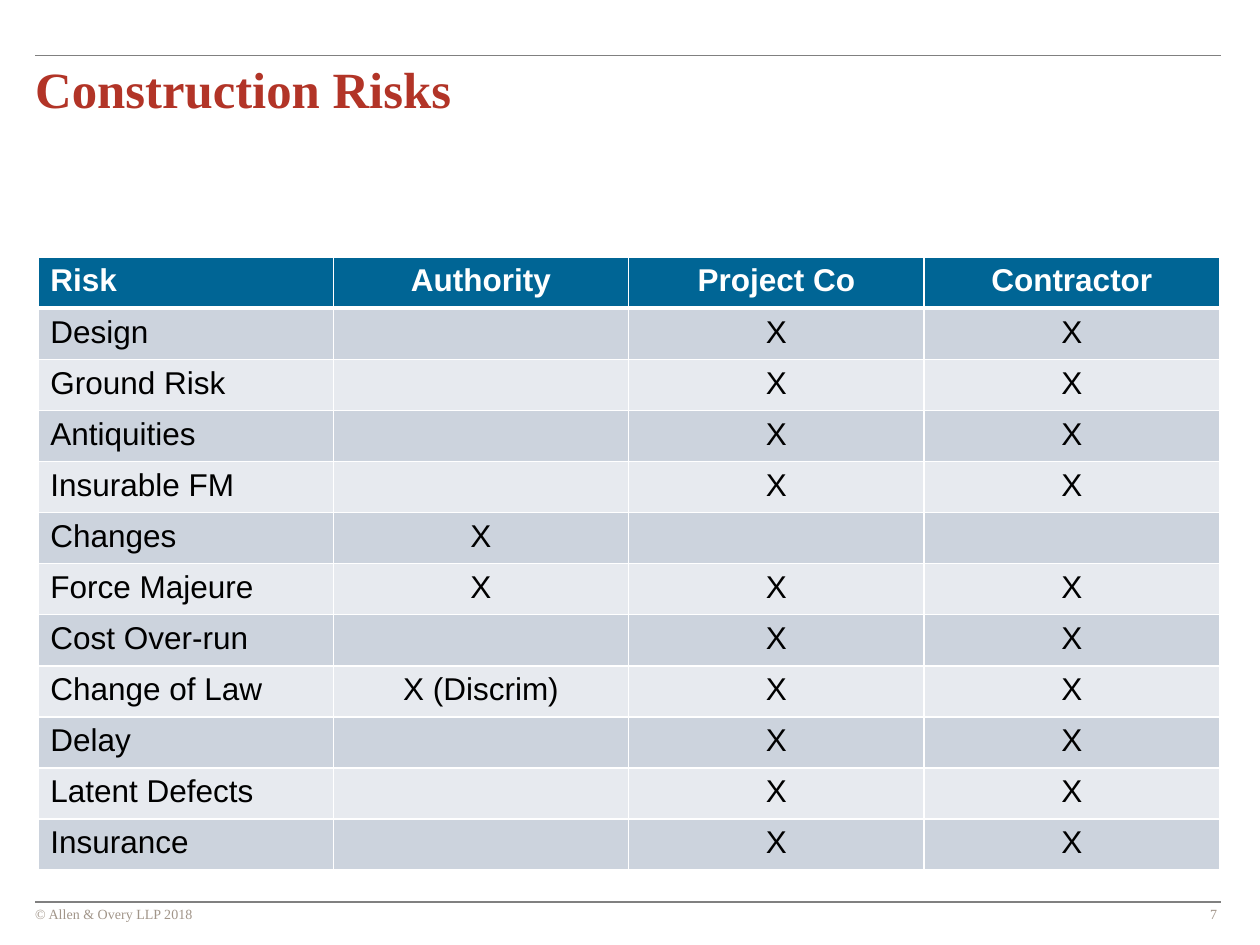
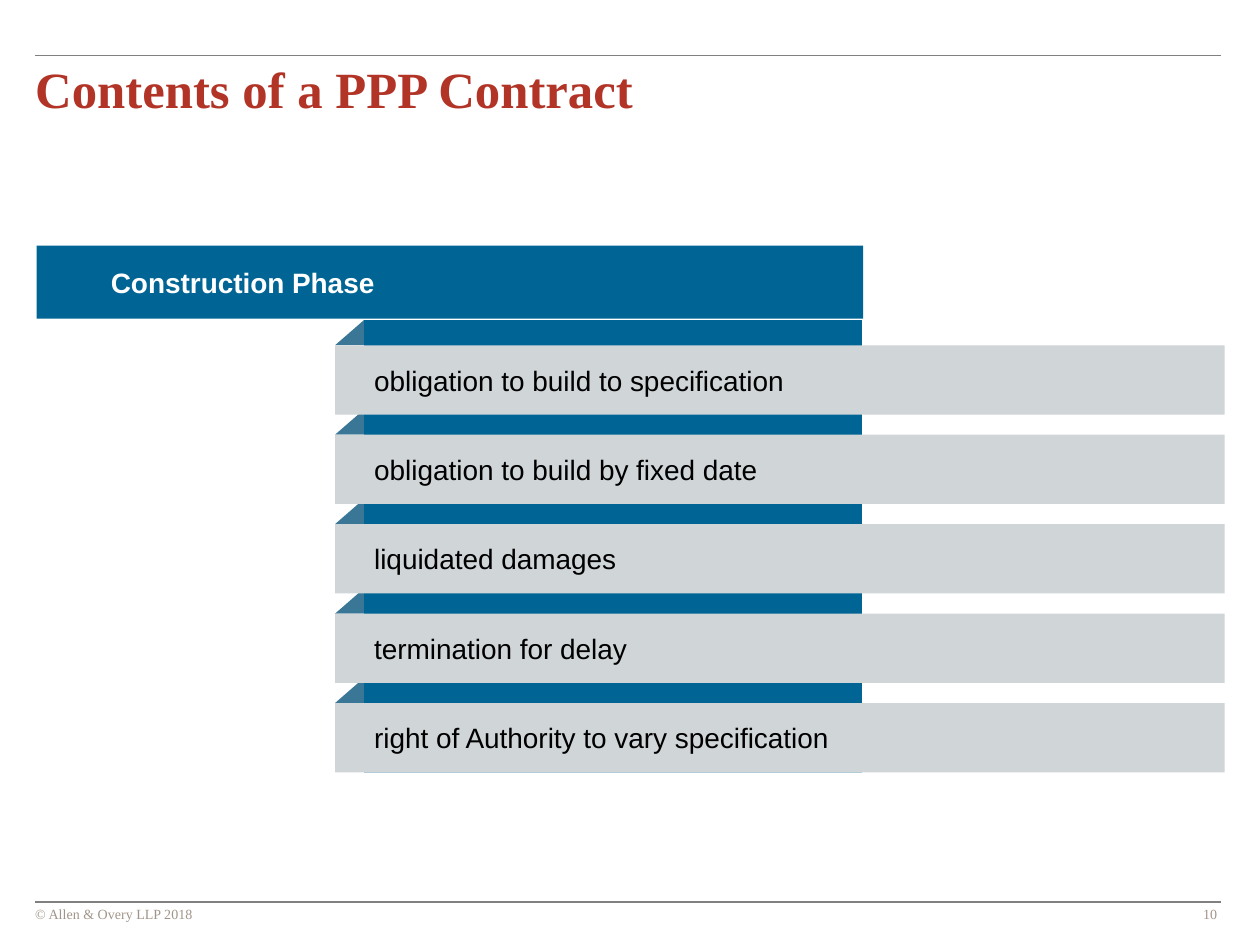
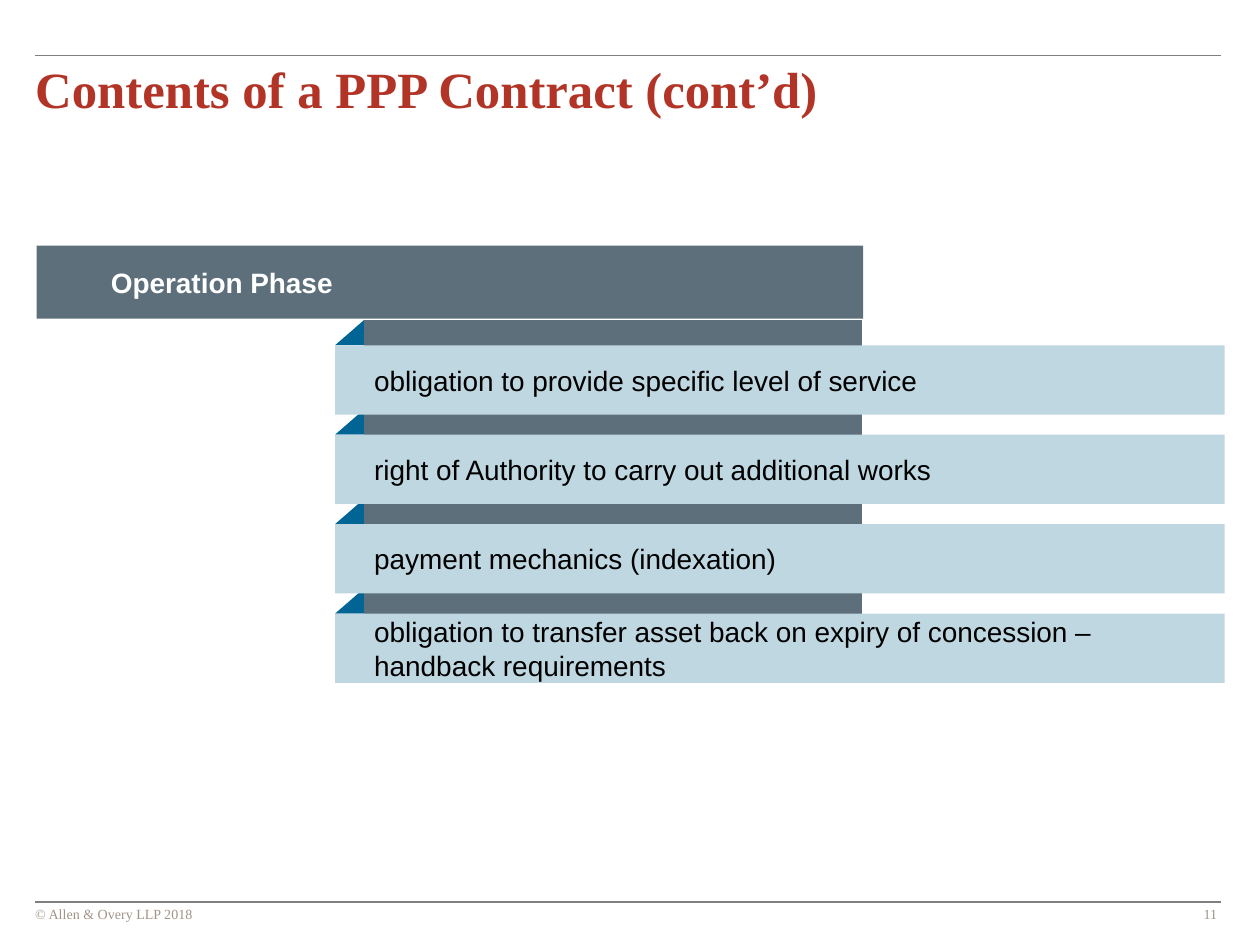
from dataclasses import dataclass

from lxml import etree
from pptx import Presentation
from pptx.dml.color import RGBColor
from pptx.enum.shapes import MSO_CONNECTOR, MSO_SHAPE
from pptx.enum.text import MSO_ANCHOR, MSO_AUTO_SIZE, PP_ALIGN
from pptx.oxml.ns import qn
from pptx.util import Inches, Pt

LEFT, CENTER, RIGHT = PP_ALIGN.LEFT, PP_ALIGN.CENTER, PP_ALIGN.RIGHT
MIDDLE = MSO_ANCHOR.MIDDLE
GROW = MSO_AUTO_SIZE.SHAPE_TO_FIT_TEXT
STRAIGHT = MSO_CONNECTOR.STRAIGHT
RECT, TRIANGLE = MSO_SHAPE.RECTANGLE, MSO_SHAPE.ISOSCELES_TRIANGLE


@dataclass(frozen=True)
class Theme:
    serif: str = "Times New Roman"
    sans: str = "Arial"
    title_size: int = 29
    table_size: int = 18
    bar_size: int = 16
    footer_size: int = 8
    red: str = "B23427"
    blue: str = "006595"
    steel: str = "3A7796"
    slate: str = "5C6F7B"
    silver: str = "D0D5D8"
    ice: str = "BFD7E1"
    row_dark: str = "CCD3DD"
    row_light: str = "E7EAEF"
    rule: str = "808080"
    footer: str = "A19589"
    white: str = "FFFFFF"
    black: str = "000000"


FOOTER = "© Allen & Overy LLP 2018"

RISK_TABLE = [
    ("Risk", "Authority", "Project Co", "Contractor"),
    ("Design", "", "X", "X"),
    ("Ground Risk", "", "X", "X"),
    ("Antiquities", "", "X", "X"),
    ("Insurable FM", "", "X", "X"),
    ("Changes", "X", "", ""),
    ("Force Majeure", "X", "X", "X"),
    ("Cost Over-run", "", "X", "X"),
    ("Change of Law", "X (Discrim)", "X", "X"),
    ("Delay", "", "X", "X"),
    ("Latent Defects", "", "X", "X"),
    ("Insurance", "", "X", "X"),
]

CONSTRUCTION = [
    "obligation to build to specification",
    "obligation to build by fixed date",
    "liquidated damages",
    "termination for delay",
    "right of Authority to vary specification",
]

OPERATION = [
    "obligation to provide specific level of service",
    "right of Authority to carry out additional works",
    "payment mechanics (indexation)",
    "obligation to transfer asset back on expiry of concession – handback requirements",
]


class Deck:
    def __init__(self, theme):
        self.theme = theme
        self.prs = Presentation()
        self.prs.slide_width, self.prs.slide_height = Inches(10), Inches(7.5)
        self.s = None

    def slide(self, title, number):
        """Start a slide with its rules, footer, page number and title."""
        t = self.theme
        self.s = self.prs.slides.add_slide(self.prs.slide_layouts[6])
        for y in (0.44, 7.16):
            self.rule(0.28, 9.69, y)
        small = dict(name=t.serif, size=t.footer_size, color=t.footer)
        self.text(FOOTER, (0.28, 7.19, 7.17, 0.13), small)
        self.text(str(number), (9.19, 7.19, 0.47, 0.13), small, RIGHT)
        self.text(title, (0.28, 0.46, 9.37, 0.49),
                  dict(name=t.serif, size=t.title_size, color=t.red, bold=True))

    def rule(self, x1, x2, y):
        ln = self.s.shapes.add_connector(
            STRAIGHT, Inches(x1), Inches(y), Inches(x2), Inches(y))
        ln.line.width = Pt(1)
        ln.line.color.rgb = RGBColor.from_string(self.theme.rule)
        etree.SubElement(ln._element.spPr, qn("a:effectLst"))

    def add_text(self, tf, text, style, align=LEFT):
        p = tf.paragraphs[0]
        p.alignment = align
        r = p.add_run()
        r.text = text
        values = dict(style)
        r.font.color.rgb = RGBColor.from_string(values.pop("color"))
        values["size"] = Pt(values["size"])
        for key, value in values.items():
            setattr(r.font, key, value)

    def frame(self, tf, margins, **settings):
        sides = ("margin_left", "margin_top", "margin_right", "margin_bottom")
        settings.update(zip(sides, map(Inches, margins)), word_wrap=True)
        for key, value in settings.items():
            setattr(tf, key, value)

    def text(self, text, box, style, align=LEFT):
        tf = self.s.shapes.add_textbox(*map(Inches, box)).text_frame
        self.frame(tf, (0, 0, 0, 0), auto_size=GROW)
        self.add_text(tf, text, style, align)

    def shape(self, kind, box, fill):
        sp = self.s.shapes.add_shape(kind, *map(Inches, box))
        sp.shadow.inherit = False
        sp.fill.solid()
        sp.fill.fore_color.rgb = RGBColor.from_string(fill)
        sp.line.fill.background()
        return sp

    def bar(self, text, box, fill, margins, color, bold=False):
        tf = self.shape(RECT, box, fill).text_frame
        self.frame(tf, margins, vertical_anchor=MIDDLE)
        self.add_text(tf, text, dict(name=self.theme.sans, size=self.theme.bar_size,
                                     color=color, bold=bold))

    def border(self, cell, side, points):
        ln = etree.SubElement(cell._tc.get_or_add_tcPr(), qn("a:ln" + side),
                              w=str(Pt(points)))
        fill = etree.SubElement(ln, qn("a:solidFill"))
        etree.SubElement(fill, qn("a:srgbClr"), val=self.theme.white)

    def table(self, rows, box):
        """Table with a blue header, banded rows and a heavy line under the header."""
        t = self.theme
        tbl = self.s.shapes.add_table(len(rows), len(rows[0]), *map(Inches, box)).table
        for i, row in enumerate(rows):
            head = i == 0
            fill = t.blue if head else (t.row_light, t.row_dark)[i % 2]
            widths = dict(L=1, R=1, T=3 if i == 1 else 1, B=3 if head else 1)
            style = dict(name=t.sans, size=t.table_size, bold=head,
                         color=t.white if head else t.black)
            for j, value in enumerate(row):
                cell = tbl.cell(i, j)
                for side, points in widths.items():
                    self.border(cell, side, points)
                cell.fill.solid()
                cell.fill.fore_color.rgb = RGBColor.from_string(fill)
                if value:
                    self.add_text(cell.text_frame, value, style, CENTER if j else LEFT)

    def phase(self, heading, items, main, fold, band):
        """Heading with a spine below it and one folded band per item."""
        t = self.theme
        x, top, step, fold_h, bar_h = 2.66, 2.54, 0.71, 0.2, 0.55
        tops = [top + step * i for i in range(len(items))]
        for y in tops:
            self.shape(TRIANGLE, (x, y, 0.46, fold_h), fold)
        spine_h = tops[-1] + fold_h + bar_h - top
        self.shape(RECT, (2.89, top, 3.95, spine_h), main)
        self.bar(heading, (0.29, 1.95, 6.56, 0.58), main,
                 (0.59, 0.05, 0.2, 0.05), t.white, bold=True)
        for y, item in zip(tops, items):
            self.bar(item, (x, y + fold_h, 7.06, bar_h), band,
                     (0.31, 0.05, 0.1, 0.05), t.black)


def main():
    t = Theme()
    deck = Deck(t)

    deck.slide("Construction Risks", 7)
    deck.table(RISK_TABLE, (0.3, 2.04, 9.38, 4.87))

    deck.slide("Contents of a PPP Contract", 10)
    deck.phase("Construction Phase", CONSTRUCTION, t.blue, t.steel, t.silver)

    deck.slide("Contents of a PPP Contract (cont’d)", 11)
    deck.phase("Operation Phase", OPERATION, t.slate, t.blue, t.ice)

    deck.prs.save("out.pptx")


if __name__ == "__main__":
    main()
